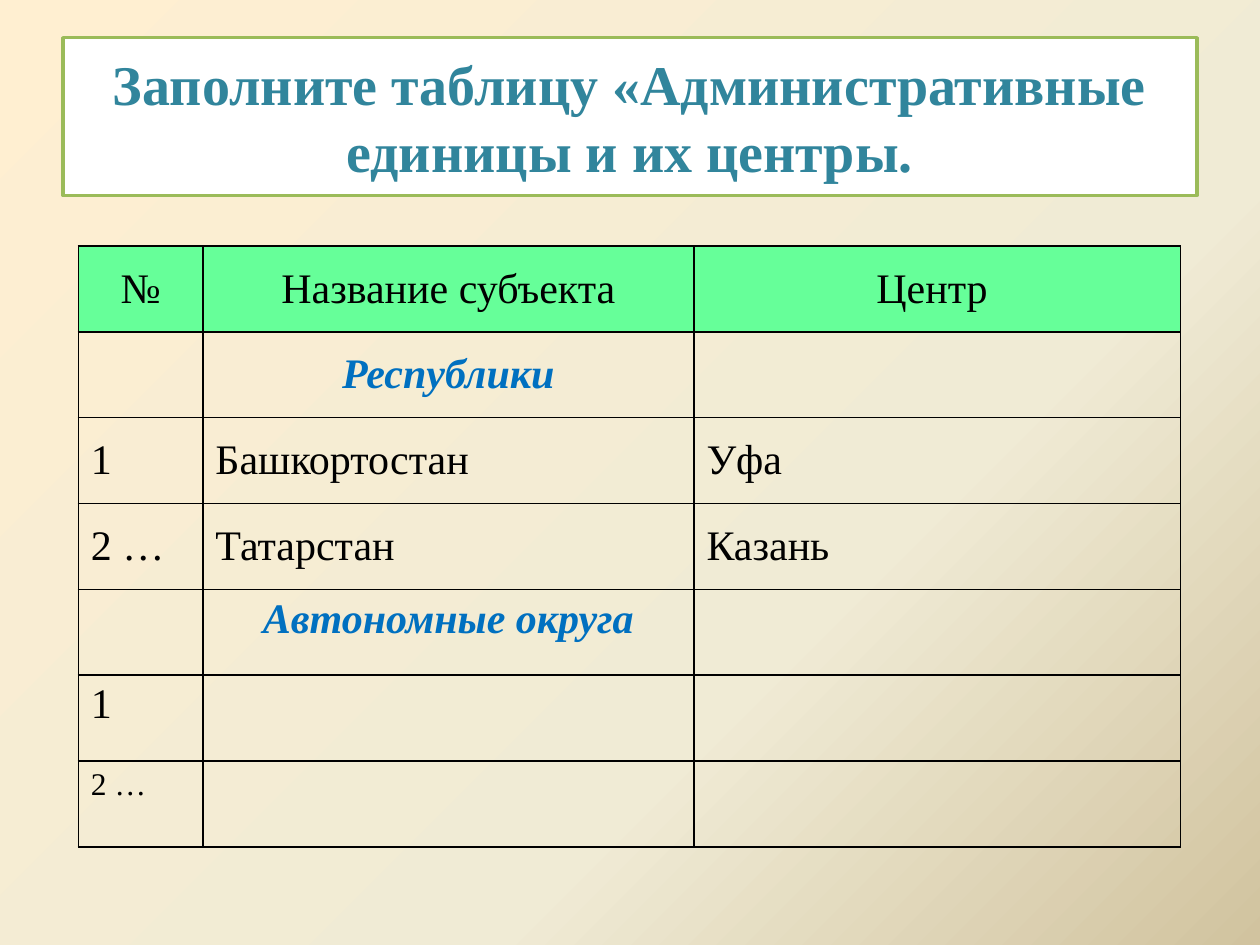
"""Build a slide with a table of administrative units and their centres."""
from lxml import etree
from pptx import Presentation
from pptx import util as u
from pptx.dml.color import RGBColor
from pptx.enum import shapes, text
from pptx.oxml.ns import qn

FONT = "Times New Roman"
COLORS = {
    "sand": "FFEFD1", "cream": "F0EBD5", "khaki": "D1C39F",
    "header": "66FF99", "group": "0070C0", "black": "000000",
    "title": "31859C", "frame": "9BBB59", "white": "FFFFFF",
}
BACKGROUND_STOPS = [(0, "sand"), (65, "cream"), (100, "khaki")]
COLUMN_WIDTHS = [2.51, 9.9, 9.81]
ROW_HEIGHT = 1.73
MIDDLE_ROWS = 4
ROWS = [
    ("header", ["№", "Название субъекта", "Центр "]),
    ("group", ["", "Республики", ""]),
    ("entry", ["1", "Башкортостан", "Уфа"]),
    ("entry", ["2 …", "Татарстан", "Казань"]),
    ("group", ["", "Автономные округа", ""]),
    ("entry", ["1", "", ""]),
    ("small", ["2 …", "", ""]),
]


def rgb(name):
    """Return the named colour."""
    return RGBColor.from_string(COLORS[name])


def add_color(parent, name):
    """Append a named colour element to an XML parent."""
    etree.SubElement(parent, qn("a:srgbClr"), val=COLORS[name])


def set_background(slide):
    """Fill the slide with a diagonal gradient."""
    fill = slide.background.fill
    fill.gradient()
    fill.gradient_angle = 315
    stops = slide.element.find(".//" + qn("a:gsLst"))
    for stop in list(stops):
        stops.remove(stop)
    for percent, name in BACKGROUND_STOPS:
        add_color(etree.SubElement(stops, qn("a:gs"), pos=str(percent * 1000)), name)


def style_paragraph(paragraph, size, color, bold=False, italic=False, centered=False):
    """Set the font and alignment of a paragraph."""
    font = paragraph.font
    font.name, font.size = FONT, u.Pt(size)
    font.bold, font.italic = bold, italic
    font.color.rgb = rgb(color)
    paragraph.alignment = text.PP_ALIGN.CENTER if centered else text.PP_ALIGN.LEFT


def add_title(slide, title):
    """Add the framed title."""
    shape = slide.shapes.add_shape(
        shapes.MSO_SHAPE.RECTANGLE, u.Cm(1.27), u.Cm(0.76), u.Cm(22.86), u.Cm(3.18))
    shape.shadow.inherit = False
    shape.fill.solid()
    shape.fill.fore_color.rgb = rgb("white")
    shape.line.color.rgb = rgb("frame")
    shape.line.width = u.Pt(2)
    frame = shape.text_frame
    frame.word_wrap = True
    frame.vertical_anchor = text.MSO_ANCHOR.MIDDLE
    frame.text = title
    style_paragraph(frame.paragraphs[0], 32, "title", bold=True, centered=True)


def set_borders(cell):
    """Draw a thin black line on each side of a cell."""
    properties = cell._tc.get_or_add_tcPr()
    for index, side in enumerate(("a:lnL", "a:lnR", "a:lnT", "a:lnB")):
        line = etree.Element(qn(side), w=str(u.Pt(1)))
        add_color(etree.SubElement(line, qn("a:solidFill")), "black")
        properties.insert(index, line)


def fill_cell(cell, kind, content, middle):
    """Write and style one table cell."""
    if kind == "header":
        cell.fill.solid()
        cell.fill.fore_color.rgb = rgb("header")
    else:
        cell.fill.background()
    set_borders(cell)
    cell.vertical_anchor = text.MSO_ANCHOR.MIDDLE if middle else text.MSO_ANCHOR.TOP
    cell.text = content
    group = kind == "group"
    style_paragraph(
        cell.text_frame.paragraphs[0], 18 if kind == "small" else 24,
        "group" if group else "black", bold=group, italic=group,
        centered=kind in ("header", "group"))


def add_units_table(slide):
    """Add the table of units and centres."""
    table = slide.shapes.add_table(
        len(ROWS), len(COLUMN_WIDTHS), u.Cm(1.58), u.Cm(4.96),
        u.Cm(sum(COLUMN_WIDTHS)), u.Cm(ROW_HEIGHT * len(ROWS))).table
    table.first_row = table.horz_banding = False
    for column, width in zip(table.columns, COLUMN_WIDTHS):
        column.width = u.Cm(width)
    for row_index, (kind, contents) in enumerate(ROWS):
        table.rows[row_index].height = u.Cm(ROW_HEIGHT)
        for column_index, content in enumerate(contents):
            fill_cell(table.cell(row_index, column_index), kind, content,
                      row_index < MIDDLE_ROWS)


def main():
    """Build and save the presentation."""
    presentation = Presentation()
    presentation.slide_width, presentation.slide_height = u.Cm(25.4), u.Cm(19.05)
    slide = presentation.slides.add_slide(presentation.slide_layouts[6])
    set_background(slide)
    add_units_table(slide)
    add_title(slide, "Заполните таблицу «Административные единицы и их центры.")
    presentation.save("out.pptx")


if __name__ == "__main__":
    main()
